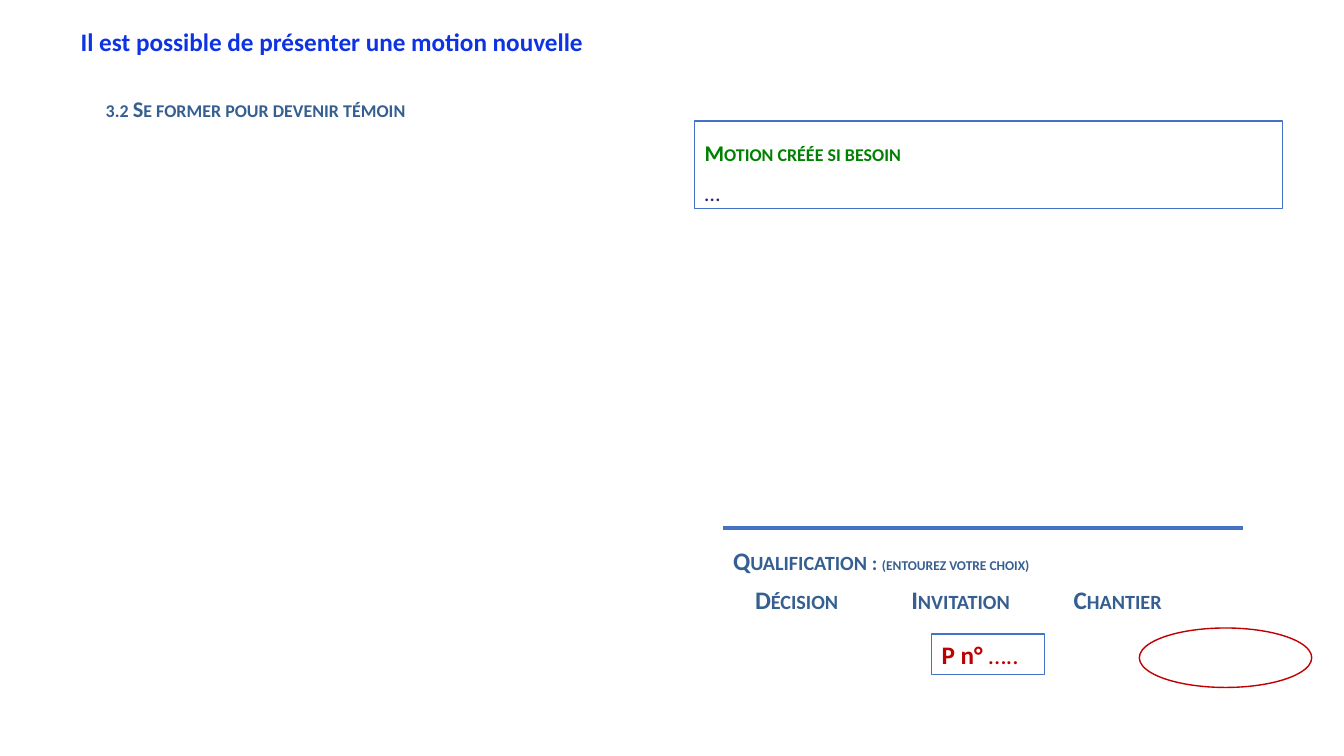
from lxml.etree import SubElement
from pptx import Presentation
from pptx.dml.color import RGBColor
from pptx.enum.shapes import MSO_CONNECTOR, MSO_SHAPE
from pptx.enum.text import MSO_ANCHOR, MSO_AUTO_SIZE, PP_ALIGN
from pptx.oxml.ns import qn
from pptx.util import Inches, Pt

THEME = {
    "font": "Calibri",
    "title": "0E33E3", "heading": "365F91", "motion": "008000",
    "dots": "2F2675", "accent": "C00000", "line": "4472C4", "paper": "FFFFFF",
    "large": 18, "medium": 16, "small": 12,
}

# Each paragraph is a list of runs: text, colour, size, bold, small caps
TITLE = [[("Il est possible de présenter une motion nouvelle", "title", "large", True, False)]]
SECTION = [[("3.2 Se former pour devenir témoin", "heading", "medium", True, True)]]
MOTION = [
    [("Motion créée si besoin", "motion", "medium", True, True)],
    [("…", "dots", "medium", False, False)],
]
NUMBER = [[("P n° ", "accent", "large", True, False), ("…..", "accent", "large", False, False)]]
QUALIFICATION = [
    [("Qualification : ", "heading", "large", True, True),
     ("(entourez votre choix)", "heading", "small", True, True)],
]
CHOICES = {"Décision": 7.39, "Invitation": 8.94, "Chantier": 10.55}  # name: left

TITLE_AT = (0.7, 0.21, 5.94, 0.4)
SECTION_AT = (0.95, 0.89, 4.62, 0.37)
MOTION_AT = (6.89, 1.2, 5.83, 0.87)
QUALIFICATION_AT = (7.17, 5.39, 5.67, 0.37)
CHOICE_TOP, CHOICE_WIDTH, CHOICE_HEIGHT = 5.78, 1.5, 0.37
NUMBER_AT = (9.24, 6.29, 1.12, 0.4)
CIRCLE_AT = (11.3, 6.23, 1.71, 0.59)
RULE_AT = (7.17, 5.24, 12.33, 5.24)  # from x, y to x, y


def colour(name):
    return RGBColor.from_string(THEME[name])


def inches(lengths):
    return [Inches(length) for length in lengths]


def place(shape, at):
    for side, length in zip(("left", "top", "width", "height"), inches(at)):
        setattr(shape, side, length)


def write(shape, paragraphs, anchor=MSO_ANCHOR.TOP, **spacing):
    frame = shape.text_frame
    frame_format = {
        "word_wrap": True, "auto_size": MSO_AUTO_SIZE.NONE, "vertical_anchor": anchor,
        "margin_left": Inches(0.1), "margin_right": Inches(0.1),
        "margin_top": Inches(0.05), "margin_bottom": Inches(0.05),
    }
    for name, value in frame_format.items():
        setattr(frame, name, value)
    for index, runs in enumerate(paragraphs):
        paragraph = frame.add_paragraph() if index else frame.paragraphs[0]
        for name, value in {"alignment": PP_ALIGN.LEFT, **spacing}.items():
            setattr(paragraph, name, value)
        for text, ink, size, bold, small_caps in runs:
            run = paragraph.add_run()
            run.text = text
            font_format = {"name": THEME["font"], "size": Pt(THEME[size]), "bold": bold}
            for name, value in font_format.items():
                setattr(run.font, name, value)
            run.font.color.rgb = colour(ink)
            if small_caps:
                run.font._element.set("cap", "small")


def remove_bullet(paragraph):
    properties = paragraph._p.get_or_add_pPr()
    properties.set("marL", "0")
    properties.set("indent", "0")
    SubElement(properties, qn("a:buNone"))


def add_text(slide, at, paragraphs, **spacing):
    write(slide.shapes.add_textbox(*inches(at)), paragraphs, **spacing)


def add_outline(slide, kind, at, line, width, fill=None):
    shape = slide.shapes.add_shape(kind, *inches(at))
    shape.shadow.inherit = False
    if fill:
        shape.fill.solid()
        shape.fill.fore_color.rgb = colour(fill)
    else:
        shape.fill.background()
    shape.line.color.rgb = colour(line)
    shape.line.width = Pt(width)
    return shape


def main():
    deck = Presentation()
    deck.slide_width, deck.slide_height = inches((13.33, 7.5))
    slide = deck.slides.add_slide(deck.slide_layouts[1])
    title, qualification = slide.placeholders

    place(title, TITLE_AT)
    write(title, TITLE)
    add_text(slide, SECTION_AT, SECTION)

    motion = add_outline(slide, MSO_SHAPE.RECTANGLE, MOTION_AT, "line", 1, "paper")
    write(motion, MOTION, line_spacing=1.5)

    rule = slide.shapes.add_connector(MSO_CONNECTOR.STRAIGHT, *inches(RULE_AT))
    rule.line.color.rgb = colour("line")
    rule.line.width = Pt(3)
    SubElement(rule._element.spPr, qn("a:effectLst"))

    place(qualification, QUALIFICATION_AT)
    write(qualification, QUALIFICATION, line_spacing=0.9, space_before=Pt(10))
    remove_bullet(qualification.text_frame.paragraphs[0])
    for choice, left in CHOICES.items():
        add_text(slide, (left, CHOICE_TOP, CHOICE_WIDTH, CHOICE_HEIGHT),
                 [[(choice, "heading", "large", True, True)]], line_spacing=0.9)

    number = add_outline(slide, MSO_SHAPE.RECTANGLE, NUMBER_AT, "line", 0.75)
    write(number, NUMBER, MSO_ANCHOR.MIDDLE)
    add_outline(slide, MSO_SHAPE.OVAL, CIRCLE_AT, "accent", 1)

    deck.save("out.pptx")


if __name__ == "__main__":
    main()
